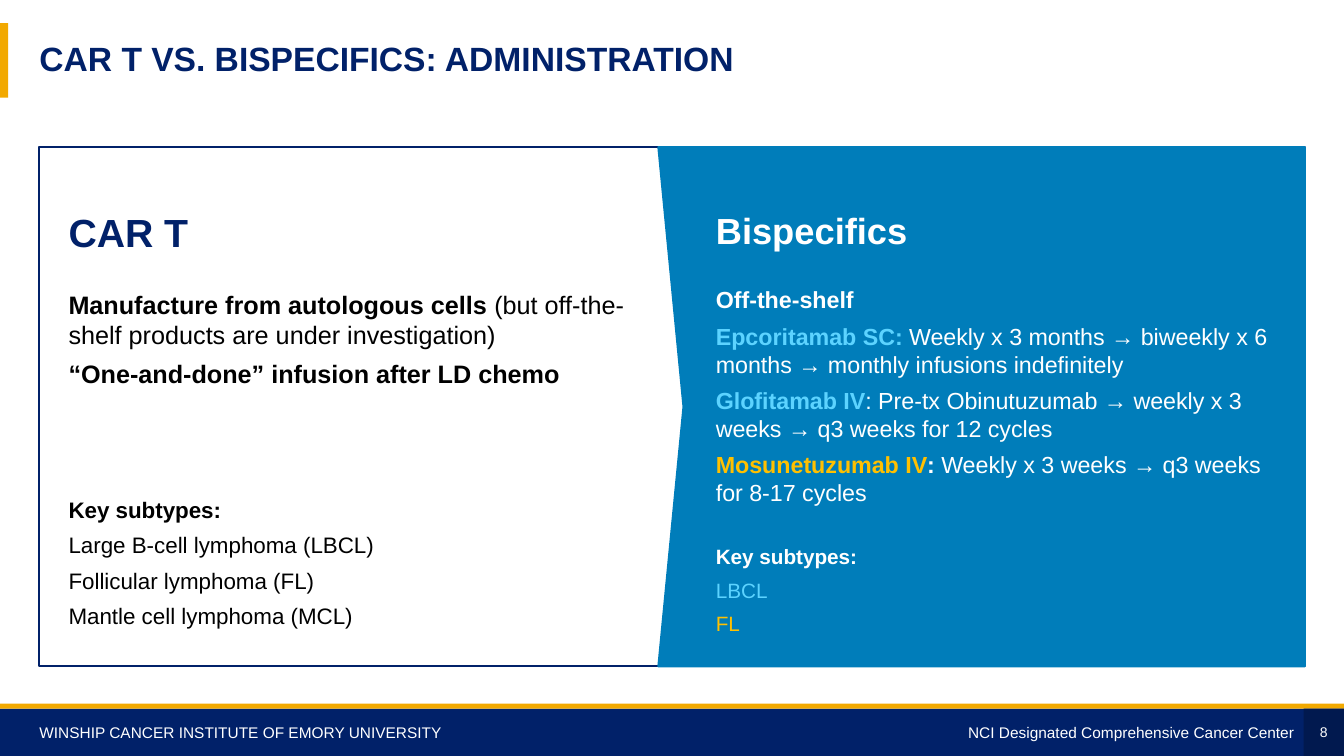
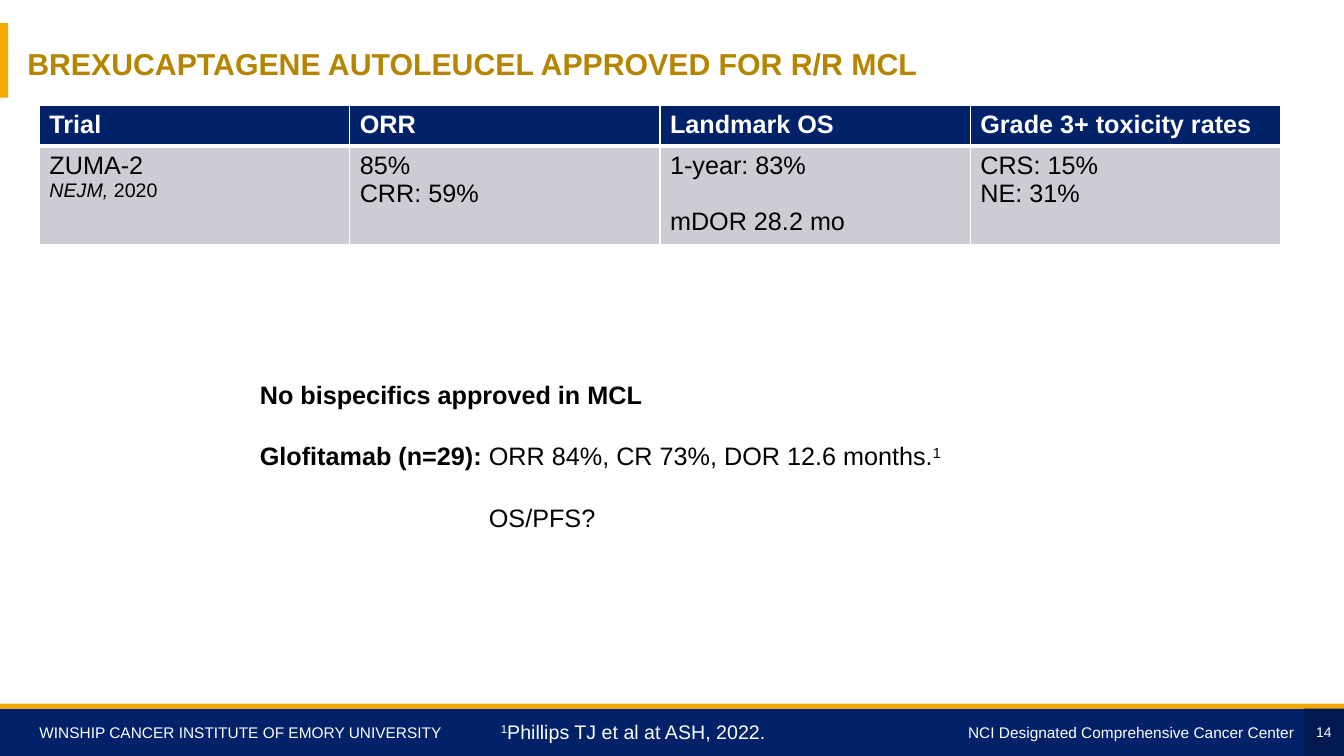
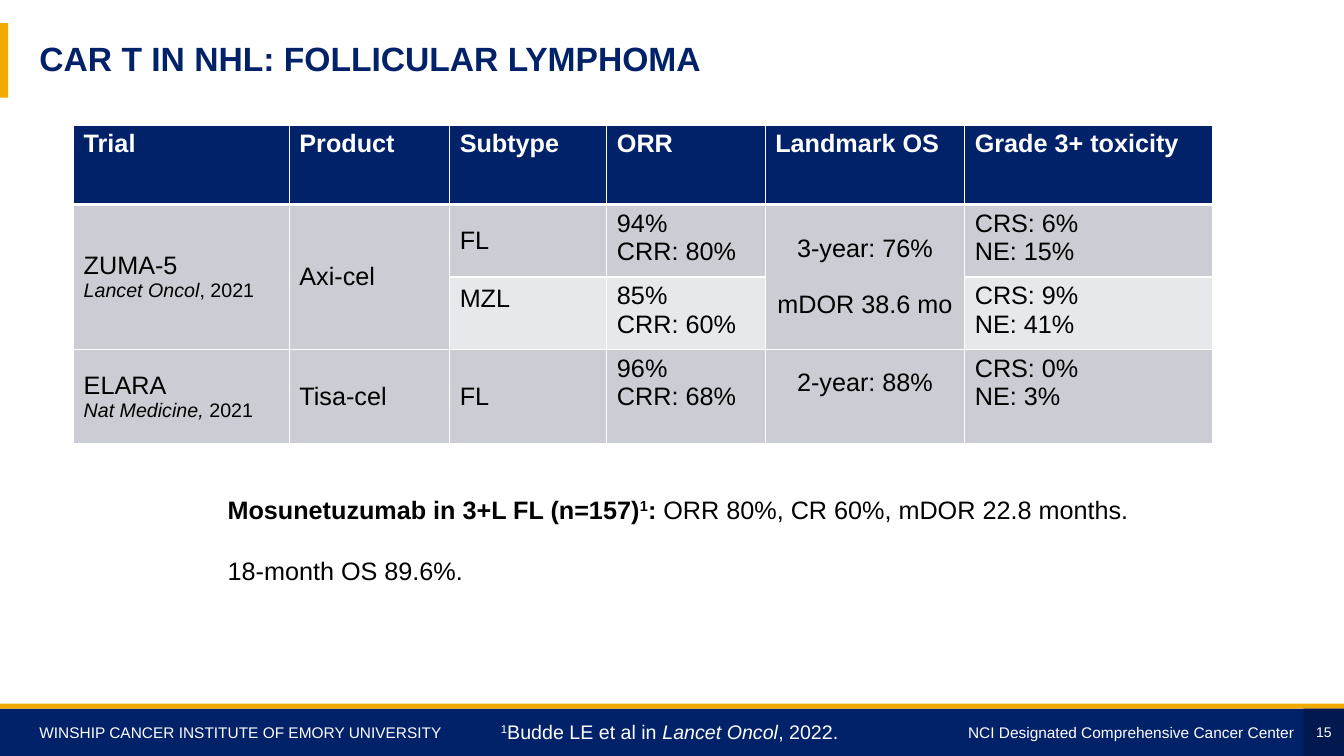
"""Build three lymphoma therapy slides with shared bands, titles and footers."""
from dataclasses import dataclass, field
from typing import Any, Optional

from lxml import etree
from pptx import Presentation
from pptx import util as u
from pptx.dml.color import RGBColor
from pptx.enum import shapes, text
from pptx.oxml import ns

WIDTH, HEIGHT = u.Inches(13.33), u.Inches(7.5)
NAVY, DEEP, GOLD, BLUE = "012169", "01194F", "F2A900", "007DBA"
WHITE, BLACK, BRONZE, SKY, AMBER = "FFFFFF", "000000", "B58500", "5CD3FF", "FFC000"
GREY, PALE = "CCCDD4", "E7E8EB"
TOP, MIDDLE = text.MSO_ANCHOR.TOP, text.MSO_ANCHOR.MIDDLE
LEFT, CENTER, RIGHT = text.PP_ALIGN.LEFT, text.PP_ALIGN.CENTER, text.PP_ALIGN.RIGHT
BLANK_LAYOUT = 6
EDGE, CONTENT_WIDTH = 2.93, 94.15
TITLE_TOP, TITLE_HEIGHT = 3.07, 9.87
FOOTER_TOP, FOOTER_HEIGHT = 93.73, 6.27
PANEL_TOP, PANEL_HEIGHT = 19.47, 68.67
NOTE_GAP, CELL_GAP = 22.5, 20


@dataclass(frozen=True)
class Box:
    """A rectangle in percent of the slide's width and height."""
    left: float
    top: float
    width: float
    height: float

    def lengths(self) -> tuple[int, int, int, int]:
        return (across(self.left), down(self.top), across(self.width), down(self.height))


@dataclass(frozen=True)
class Run:
    """A stretch of text that shares one look."""
    words: str
    size: float = 18
    color: str = BLACK
    bold: bool = False
    italic: bool = False
    raised: bool = False


@dataclass(frozen=True)
class Line:
    """A paragraph with its spacing in points and its indent in percent."""
    runs: tuple[Run, ...]
    format: dict[str, Any] = field(default_factory=dict)
    indent: float = 0


@dataclass(frozen=True)
class Cell:
    """A table cell that may span several rows."""
    lines: tuple[Line, ...]
    fill: str = GREY
    format: dict[str, Any] = field(default_factory=dict)
    rows: int = 1


@dataclass(frozen=True)
class Heading:
    """A slide title and its look."""
    words: str
    box: Box = Box(EDGE, TITLE_TOP, CONTENT_WIDTH, TITLE_HEIGHT)
    size: float = 24
    color: str = NAVY
    anchor: Any = MIDDLE


BANDS = (
    (Box(0, FOOTER_TOP, 100, FOOTER_HEIGHT), NAVY),
    (Box(0, 93.07, 100, 0.67), GOLD),
    (Box(0, TITLE_TOP, 0.6, TITLE_HEIGHT), GOLD),
    (Box(97, FOOTER_TOP, 3, FOOTER_HEIGHT), DEEP),
)
FLUSH = {"margin_left": 0}
TIGHT = {"margin_left": 0, "margin_right": 0}


def across(percent: float) -> int:
    """Turn a share of the slide's width into a length."""
    return round(WIDTH * percent / 100)


def down(percent: float) -> int:
    """Turn a share of the slide's height into a length."""
    return round(HEIGHT * percent / 100)


def rgb(color: str) -> RGBColor:
    """Turn a hex string into a colour."""
    return RGBColor.from_string(color)


def apply(target: Any, values: dict[str, Any]) -> None:
    """Set each named attribute of the target."""
    for name, value in values.items():
        setattr(target, name, value)


def line(*runs: Run, indent: float = 0, **values: Any) -> Line:
    """Make a paragraph from runs and format values."""
    return Line(runs, values, indent)


def write(frame: Any, lines: tuple[Line, ...]) -> None:
    """Fill a text frame with paragraphs."""
    for index, item in enumerate(lines):
        paragraph = frame.paragraphs[0] if index == 0 else frame.add_paragraph()
        if item.indent:
            paragraph._p.get_or_add_pPr().set("marL", str(across(item.indent)))
        apply(paragraph, item.format)
        for part in item.runs:
            run = paragraph.add_run()
            run.text = part.words
            apply(run.font, {"name": "Arial", "size": u.Pt(part.size),
                             "bold": part.bold, "italic": part.italic})
            run.font.color.rgb = rgb(part.color)
            if part.raised:
                run._r.get_or_add_rPr().set("baseline", "30000")


def add_text(slide: Any, box: Box, lines: tuple[Line, ...], **values: Any) -> None:
    """Add a wrapping text box."""
    frame = slide.shapes.add_textbox(*box.lengths()).text_frame
    apply(frame, {"word_wrap": True, **values})
    write(frame, lines)


def paint(shape: Any, fill: Optional[str], outline: Optional[str]) -> None:
    """Set the fill and outline of a shape and drop its shadow."""
    shape.shadow.inherit = False
    for target, color in ((shape.fill, fill), (shape.line.fill, outline)):
        if color:
            target.solid()
            target.fore_color.rgb = rgb(color)
        else:
            target.background()
    if outline:
        shape.line.width = u.Pt(1.5)


def add_rectangle(slide: Any, box: Box, fill: Optional[str] = None,
                  outline: Optional[str] = None) -> None:
    """Add a plain rectangle."""
    shape = slide.shapes.add_shape(shapes.MSO_SHAPE.RECTANGLE, *box.lengths())
    paint(shape, fill, outline)


def add_notched_panel(slide: Any) -> None:
    """Add the right panel whose left side points inward."""
    left, notch, right = 48.99, 50.86, EDGE + CONTENT_WIDTH
    bottom, middle = PANEL_TOP + PANEL_HEIGHT, PANEL_TOP + PANEL_HEIGHT / 2
    corners = ((right, PANEL_TOP), (right, bottom), (left, bottom), (notch, middle))
    builder = slide.shapes.build_freeform(across(left), down(PANEL_TOP))
    builder.add_line_segments([(across(x), down(y)) for x, y in corners], close=True)
    paint(builder.convert_to_shape(), BLUE, BLUE)


def add_border(cell: Any, side: str, points: float) -> None:
    """Draw one white border of a table cell."""
    edge = etree.SubElement(cell._tc.get_or_add_tcPr(), ns.qn(f"a:ln{side}"),
                            w=str(u.Pt(points)))
    fill = etree.SubElement(edge, ns.qn("a:solidFill"))
    etree.SubElement(fill, ns.qn("a:srgbClr"), val=WHITE)


def add_table(slide: Any, left: float, top: float, columns: tuple[float, ...],
              heights: tuple[float, ...], rows: tuple[tuple[Optional[Cell], ...], ...]) -> None:
    """Add a table with white rules and filled cells."""
    box = Box(left, top, sum(columns), sum(heights))
    table = slide.shapes.add_table(len(heights), len(columns), *box.lengths()).table
    for column, width in zip(table.columns, columns):
        column.width = across(width)
    for row, height in zip(table.rows, heights):
        row.height = down(height)
    for row_index, row in enumerate(rows):
        for column_index, item in enumerate(row):
            cell = table.cell(row_index, column_index)
            for side in "LRTB":
                add_border(cell, side, 3 if row_index == 0 and side == "B" else 1)
            cell.fill.solid()
            cell.fill.fore_color.rgb = rgb(item.fill if item else GREY)
            if item:
                apply(cell, item.format)
                write(cell.text_frame, item.lines)
                if item.rows > 1:
                    cell.merge(table.cell(row_index + item.rows - 1, column_index))


def header(*names: str) -> tuple[Cell, ...]:
    """Make the header row of a table."""
    return tuple(Cell((line(Run(name, color=WHITE, bold=True)),), NAVY) for name in names)


def values(*words: str, fill: str = GREY) -> Cell:
    """Make a top-aligned cell with one paragraph for each value."""
    return Cell(tuple(line(Run(word)) for word in words), fill)


def centred(*words: str, rows: int = 1, **format_values: Any) -> Cell:
    """Make a cell of centred values with a line between them."""
    lines = tuple(line(Run(word), alignment=CENTER, space_before=u.Pt(CELL_GAP if index else 0))
                  for index, word in enumerate(words))
    return Cell(lines, GREY, {"vertical_anchor": MIDDLE, **format_values}, rows)


def label(word: str, fill: str = GREY, rows: int = 1, **format_values: Any) -> Cell:
    """Make a vertically centred cell with one word."""
    return Cell((line(Run(word)),), fill, {"vertical_anchor": MIDDLE, **format_values}, rows)


def trial(name: str, journal: str, year: str, anchor: Any = MIDDLE, rows: int = 1) -> Cell:
    """Make a cell with a trial and the journal that reported it."""
    source = line(Run(journal, 14, italic=True), Run(year, 14))
    return Cell((line(Run(name)), source), GREY, {"vertical_anchor": anchor}, rows)


def add_footnote(slide: Any, *runs: Run) -> None:
    """Add a numbered citation in the footer."""
    add_text(slide, Box(36.53, 94.53, 26.93, 4.53),
             (line(Run("1", 14, "FDFEFE", raised=True), *runs),))


def start_slide(presentation: Any, heading: Heading, number: int) -> Any:
    """Add a blank slide with the bands, footer, title and number."""
    slide = presentation.slides.add_slide(presentation.slide_layouts[BLANK_LAYOUT])
    for box, color in BANDS:
        add_rectangle(slide, box, color)
    add_text(slide, Box(69.24, 94.93, 27.08, 3.87),
             (line(Run("NCI Designated Comprehensive Cancer Center", 11, WHITE),
                   alignment=RIGHT),), margin_right=0)
    add_text(slide, Box(EDGE, 94.93, 32.86, 3.87),
             (line(Run("WINSHIP CANCER INSTITUTE OF EMORY UNIVERSITY", 11, WHITE)),), **FLUSH)
    add_text(slide, heading.box,
             (line(Run(heading.words, heading.size, heading.color, True), line_spacing=0.9),),
             vertical_anchor=heading.anchor, **FLUSH)
    add_text(slide, Box(97, 94.53, 3, 4.53),
             (line(Run(str(number), 10, WHITE), alignment=CENTER),),
             vertical_anchor=MIDDLE, **TIGHT)
    return slide


def build_administration(presentation: Any) -> None:
    """Compare how the two therapies are given."""
    slide = start_slide(presentation, Heading("CAR T VS. BISPECIFICS: ADMINISTRATION"), 8)
    add_rectangle(slide, Box(EDGE, PANEL_TOP, CONTENT_WIDTH, PANEL_HEIGHT), outline=NAVY)
    add_notched_panel(slide)
    wide, narrow = {"space_after": u.Pt(24)}, {"space_after": u.Pt(6)}
    subtypes = ("Large B-cell lymphoma (LBCL)", "Follicular lymphoma (FL)",
                "Mantle cell lymphoma (MCL)")
    add_text(slide, Box(5.1, 26.93, 42.99, 58.67), (
        line(Run("CAR T", 28, NAVY, True), **wide),
        line(Run("Manufacture from autologous cells ", bold=True),
             Run("(but off-the-shelf products are under investigation)"), **narrow),
        line(Run("“One-and-done” infusion after LD chemo", bold=True), **narrow),
        line(Run("Key subtypes:", 16, bold=True), space_before=u.Pt(71), **narrow),
        *(line(Run(subtype, 16), **narrow) for subtype in subtypes),
    ), **FLUSH)
    size, small = 16.6, 14.8
    add_text(slide, Box(53.26, 26.93, 42.16, 58.67), (
        line(Run("Bispecifics", 25.9, WHITE, True), **wide),
        line(Run("Off-the-shelf", size, WHITE, True), **narrow),
        line(Run("Epcoritamab SC: ", size, SKY, True),
             Run("Weekly x 3 months → biweekly x 6 months → monthly infusions indefinitely",
                 size, WHITE), **narrow),
        line(Run("Glofitamab IV", size, SKY, True),
             Run(": Pre-tx Obinutuzumab → weekly x 3 weeks → q3 weeks for 12 cycles",
                 size, WHITE), **narrow),
        line(Run("Mosunetuzumab IV", size, AMBER, True), Run(": ", size, WHITE, True),
             Run("Weekly x 3 weeks → q3 weeks for 8-17 cycles", size, WHITE), **narrow),
        line(Run("Key subtypes:", small, WHITE, True), space_before=u.Pt(21), **narrow),
        line(Run("LBCL", small, SKY), **narrow),
        line(Run("FL", small, AMBER), **narrow),
    ), **FLUSH)


def build_mantle_cell(presentation: Any) -> None:
    """Show the results in mantle cell lymphoma."""
    heading = Heading("BREXUCAPTAGENE AUTOLEUCEL APPROVED FOR R/R MCL",
                      Box(2.03, 5.87, CONTENT_WIDTH, TITLE_HEIGHT), 21.6, BRONZE, TOP)
    slide = start_slide(presentation, heading, 14)
    survival = Cell((line(Run("1-year: 83%")),
                     line(Run("mDOR 28.2 mo"), space_before=u.Pt(CELL_GAP))))
    add_table(slide, EDGE, 14, (23.09,) * 4, (5.33, 13.07), (
        header("Trial", "ORR", "Landmark OS", "Grade 3+ toxicity rates"),
        (trial("ZUMA-2", "NEJM, ", "2020", TOP), values("85%", "CRR: 59%"), survival,
         values("CRS: 15%", "NE: 31%")),
    ))
    gap = {"space_before": u.Pt(NOTE_GAP)}
    add_text(slide, Box(18.6, 49.47, 61.07, 28.67), (
        line(Run("No bispecifics approved in MCL", bold=True)),
        line(Run("Glofitamab (n=29): ", bold=True),
             Run("ORR 84%, CR 73%, DOR 12.6 months."), Run("1", raised=True), **gap),
        line(Run("OS/PFS?"), indent=17.04, **gap),
    ))
    add_footnote(slide, Run("Phillips TJ et al at ASH, 2022.", 14, "FDFEFE"))


def build_follicular(presentation: Any) -> None:
    """Show the results in follicular lymphoma."""
    slide = start_slide(presentation, Heading("CAR T IN NHL: FOLLICULAR LYMPHOMA"), 15)
    lifted = {"margin_bottom": down(4.4)}
    add_table(slide, 5.48, 16.53, (16.05, 11.93, 11.7, 11.78, 14.85, 18.45),
              (10.53, 9.6, 9.6, 12.4), (
        header("Trial", "Product", "Subtype", "ORR", "Landmark OS", "Grade 3+ toxicity"),
        (trial("ZUMA-5", "Lancet Oncol", ", 2021", rows=2), label("Axi-cel", rows=2),
         label("FL"), values("94%", "CRR: 80%"),
         centred("3-year: 76%", "mDOR 38.6 mo", rows=2), values("CRS: 6%", "NE: 15%")),
        (None, None, label("MZL", PALE, **lifted), values("85%", "CRR: 60%", fill=PALE),
         None, values("CRS: 9%", "NE: 41%", fill=PALE)),
        (trial("ELARA", "Nat Medicine, ", "2021"), label("Tisa-cel"), label("FL"),
         values("96%", "CRR: 68%"), centred("2-year: 88%", **lifted),
         values("CRS: 0%", "NE: 3%")),
    ))
    add_text(slide, Box(16.2, 64.67, 69.54, 24.67), (
        line(Run("Mosunetuzumab in 3+L FL (n=157)", bold=True),
             Run("1", bold=True, raised=True), Run(": ", bold=True),
             Run("ORR 80%, CR 60%, mDOR 22.8 months.")),
        line(Run("18-month OS 89.6%."), space_before=u.Pt(NOTE_GAP)),
    ))
    add_footnote(slide, Run("Budde LE et al in ", 14, "FDFEFE"),
                 Run("Lancet Oncol", 14, "FDFEFE", italic=True),
                 Run(", 2022.", 14, "FDFEFE"))


def main() -> None:
    """Build and save the presentation."""
    presentation = Presentation()
    apply(presentation, {"slide_width": WIDTH, "slide_height": HEIGHT})
    for build in (build_administration, build_mantle_cell, build_follicular):
        build(presentation)
    presentation.save("out.pptx")


if __name__ == "__main__":
    main()
